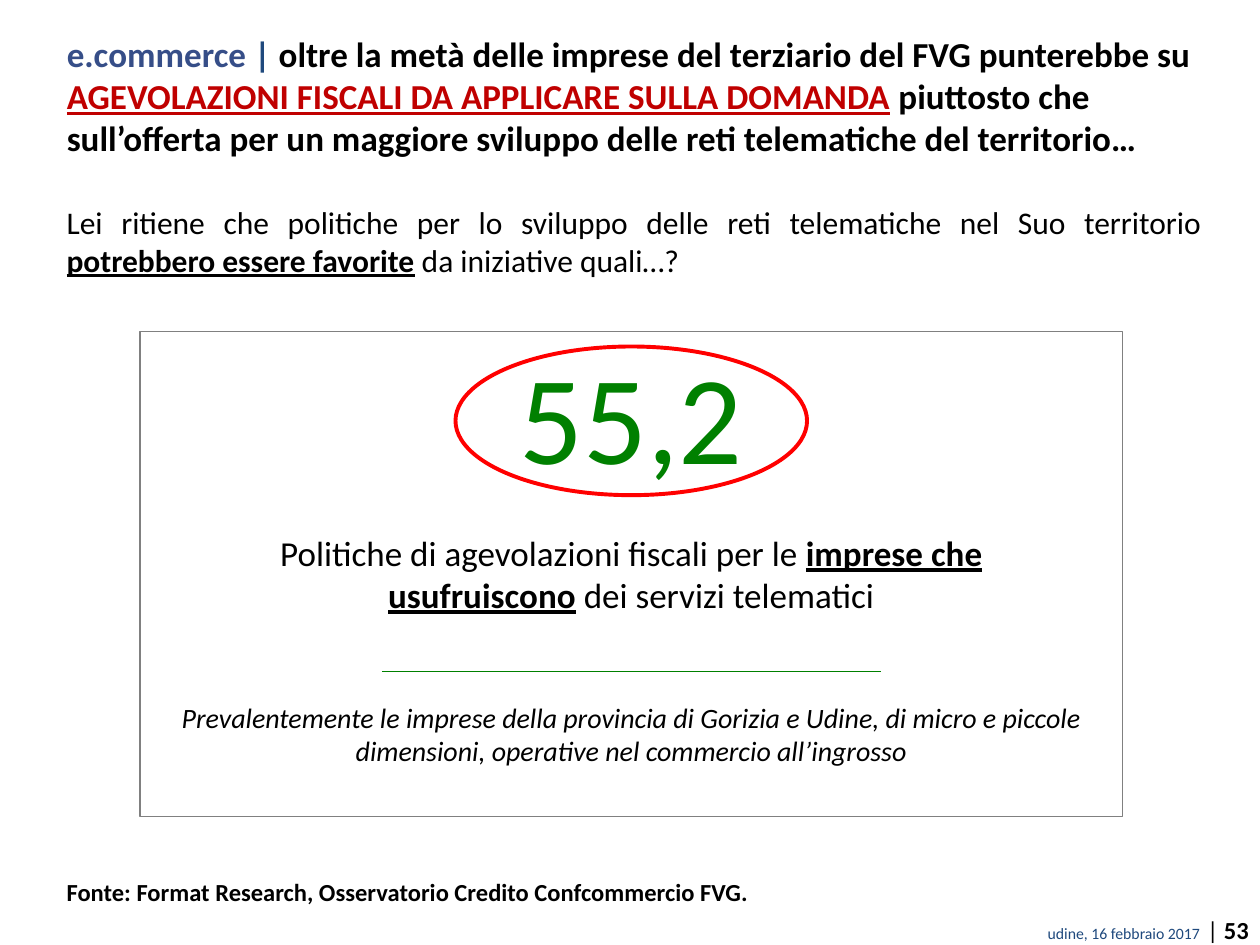
from pptx import Presentation
from pptx.dml.color import RGBColor
from pptx.enum.shapes import MSO_CONNECTOR, MSO_SHAPE
from pptx.enum.text import MSO_ANCHOR, MSO_AUTO_SIZE, PP_ALIGN
from pptx.oxml.ns import qn
from pptx.util import Inches, Pt
from lxml import etree

LEFT, CENTER, RIGHT, JUSTIFY = PP_ALIGN.LEFT, PP_ALIGN.CENTER, PP_ALIGN.RIGHT, PP_ALIGN.JUSTIFY
TOP = MSO_ANCHOR.TOP
NO_FIT = MSO_AUTO_SIZE.NONE
RECTANGLE, OVAL = MSO_SHAPE.RECTANGLE, MSO_SHAPE.OVAL
STRAIGHT = MSO_CONNECTOR.STRAIGHT

FONT = "Calibri"
BLACK, NAVY, BLUE, RED = "000000", "1F497D", "364E88", "C00000"
GREEN, GREY, BRIGHT_RED = "008000", "808080", "FF0000"
EMPHASIS = {"bold": True, "underline": True}


def rgb(value):
    return RGBColor.from_string(value)


def write_spans(shape, spans, size, align=LEFT, wrap=True):
    frame = shape.text_frame
    frame.auto_size = NO_FIT
    frame.word_wrap = wrap
    frame.vertical_anchor = TOP
    para = frame.paragraphs[0]
    para.alignment = align
    for text, style in spans:
        span = para.add_run()
        span.text = text
        font = span.font
        font.name = FONT
        font.size = Pt(style.get("size", size))
        font.color.rgb = rgb(style.get("color", BLACK))
        font.bold = style.get("bold", False)
        font.italic = style.get("italic", False)
        font.underline = style.get("underline", False)
    return para


def add_text(page, box, spans, size, align=LEFT, wrap=True):
    shape = page.shapes.add_textbox(*map(Inches, box))
    return write_spans(shape, spans, size, align, wrap)


def add_outline(page, kind, box, color, weight):
    shape = page.shapes.add_shape(kind, *map(Inches, box))
    shape.shadow.inherit = False
    shape.fill.background()
    shape.line.color.rgb = rgb(color)
    shape.line.width = Pt(weight)


def add_rule(page, left, top, width, color):
    rule = page.shapes.add_connector(
        STRAIGHT, Inches(left), Inches(top), Inches(left + width), Inches(top))
    rule.line.color.rgb = rgb(color)
    rule.line.width = Pt(1)
    properties = rule._element.find(qn("p:spPr"))
    etree.SubElement(properties, qn("a:effectLst"))


def place_title(page, box):
    title = page.shapes.title
    title.left, title.top, title.width, title.height = map(Inches, box)
    bold = {"bold": True}
    write_spans(title, [
        ("e.commerce ", {**bold, "color": BLUE}),
        ("| ", {**bold, "color": NAVY}),
        ("oltre la metà delle imprese del terziario del FVG punterebbe su ", bold),
        ("AGEVOLAZIONI FISCALI DA APPLICARE SULLA DOMANDA", {**EMPHASIS, "color": RED}),
        (" piuttosto che sull’offerta per un maggiore sviluppo delle reti "
         "telematiche del territorio…", bold),
    ], 20)


def place_question(page, box):
    add_text(page, box, [
        ("Lei ritiene che politiche per lo sviluppo delle reti telematiche "
         "nel Suo territorio ", {}),
        ("potrebbero essere favorite", EMPHASIS),
        (" da iniziative quali…?", {}),
    ], 18, JUSTIFY)


def place_result(page, box):
    left, top, width, height = box

    def centered(part_width, offset, part_height):
        return left + (width - part_width) / 2, top + offset, part_width, part_height

    add_outline(page, RECTANGLE, box, GREY, 1)
    add_text(page, centered(1.99, 0.01, 1.31), [("55,2", {"color": GREEN})], 72, CENTER, False)
    add_outline(page, OVAL, centered(2.79, 0.12, 1.18), BRIGHT_RED, 2.25)
    add_text(page, centered(7.17, 1.54, 0.77), [
        ("Politiche di agevolazioni fiscali per le ", {}),
        ("imprese che usufruiscono", EMPHASIS),
        (" dei servizi telematici", {}),
    ], 20, CENTER)
    rule_left, rule_top, rule_width, _ = centered(3.96, 2.7, 0)
    add_rule(page, rule_left, rule_top, rule_width, GREEN)
    add_text(page, centered(7.48, 2.88, 0.64), [
        ("Prevalentemente le imprese della provincia di Gorizia e Udine, di micro e "
         "piccole dimensioni, operative nel commercio all’ingrosso", {"italic": True}),
    ], 16, CENTER)


def place_source(page, box):
    para = add_text(page, box, [
        ("Fonte: Format Research, Osservatorio Credito Confcommercio FVG.", {"bold": True}),
    ], 14)
    para.line_spacing = 1.3


def place_footer(page, box):
    add_text(page, box, [
        ("udine, 16 febbraio 2017  ", {"color": NAVY, "size": 9}),
        ("| ", {}),
        ("53", {"bold": True}),
    ], 14, RIGHT)


def main():
    deck = Presentation()
    deck.slide_width, deck.slide_height = Inches(10), Inches(7.5)
    page = deck.slides.add_slide(deck.slide_layouts[5])
    place_title(page, (0.43, 0.21, 9.57, 0.84))
    place_question(page, (0.43, 1.56, 9.21, 0.71))
    place_result(page, (1.11, 2.63, 7.8, 3.85))
    place_source(page, (0.43, 6.84, 9.09, 0.41))
    place_footer(page, (3.08, 7.21, 6.93, 0.33))
    deck.save("out.pptx")


if __name__ == "__main__":
    main()
